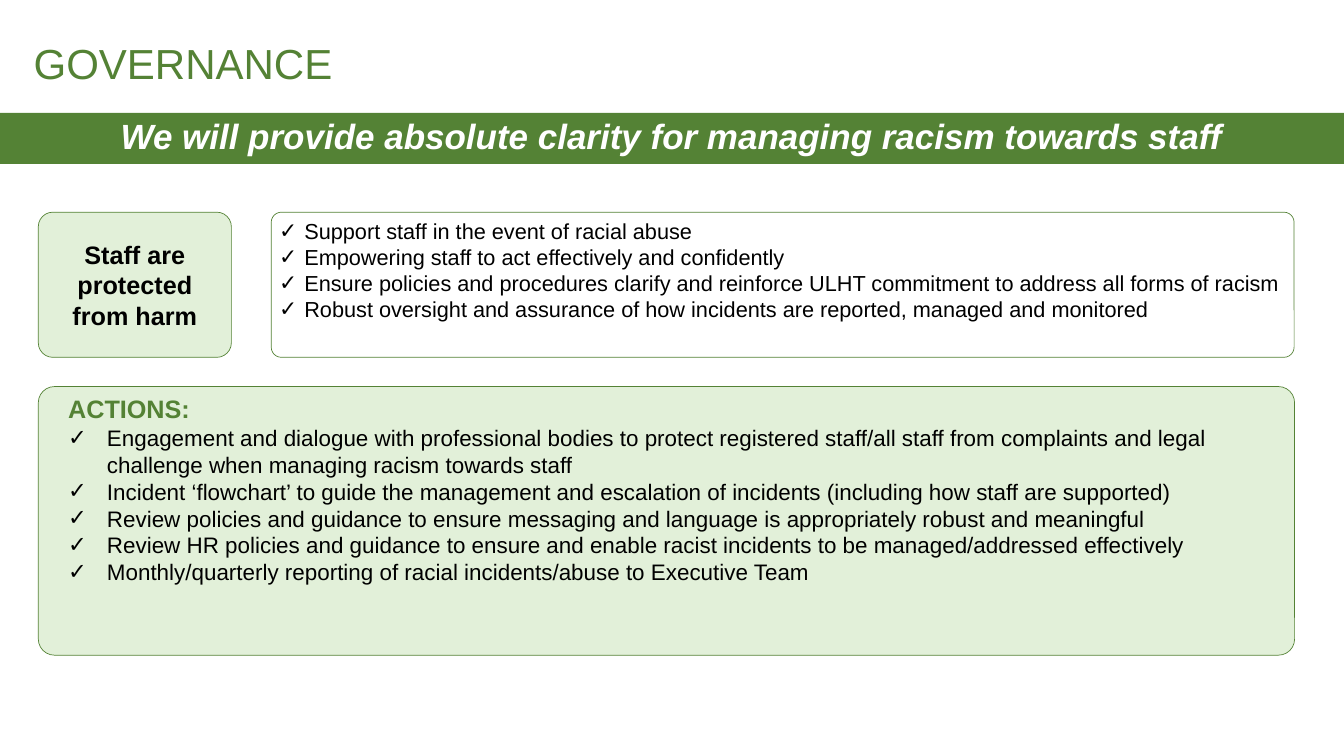
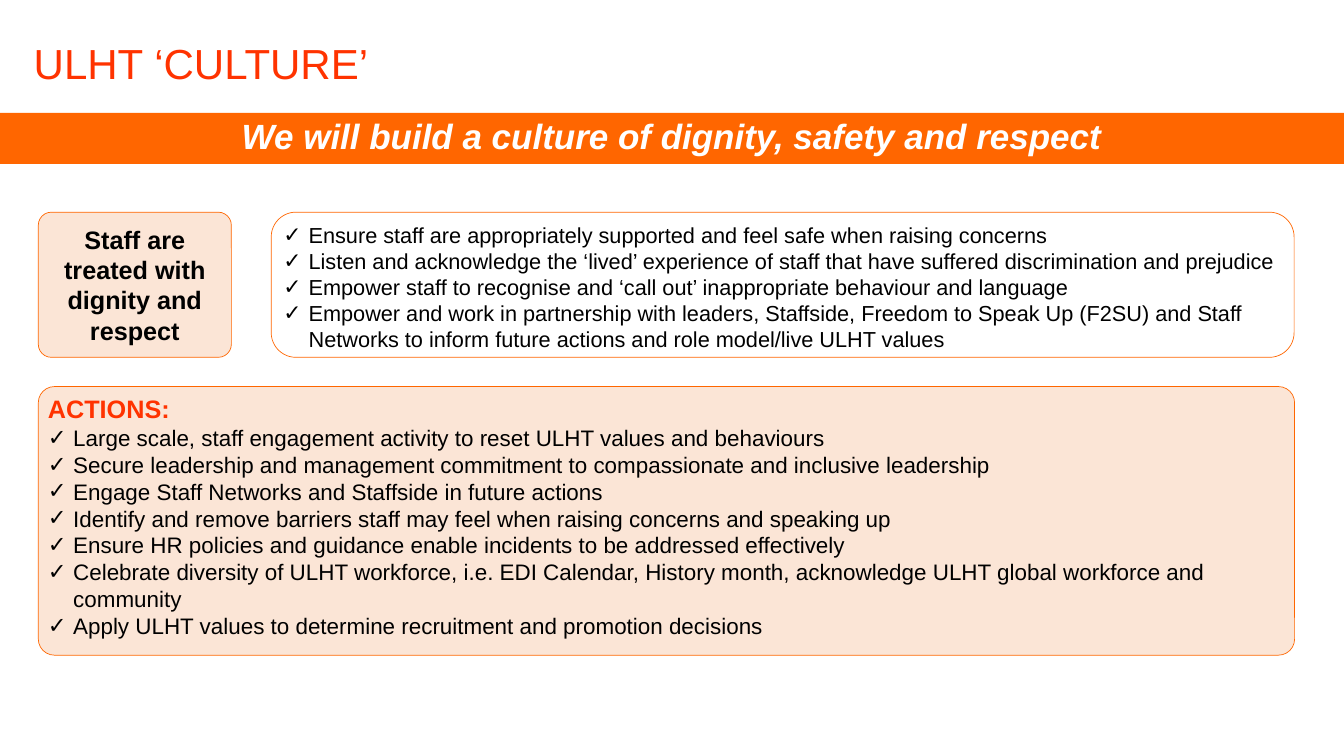
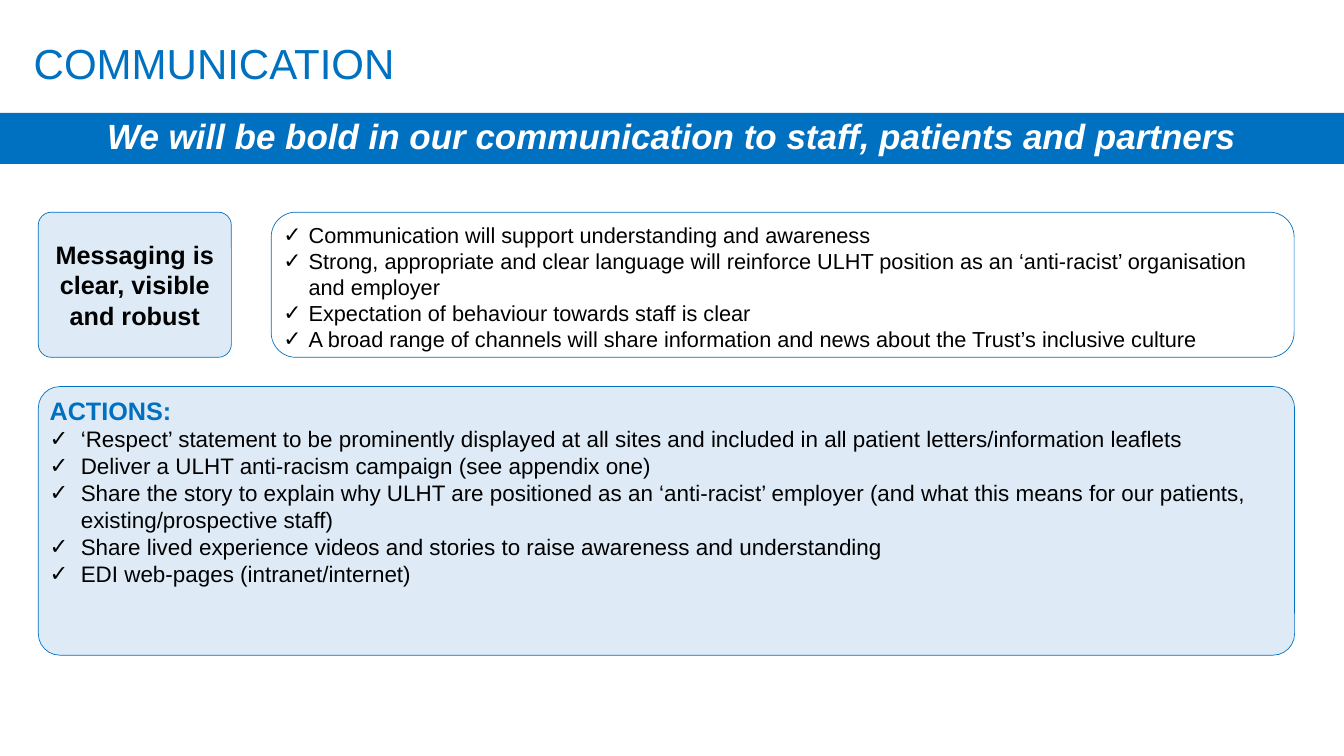
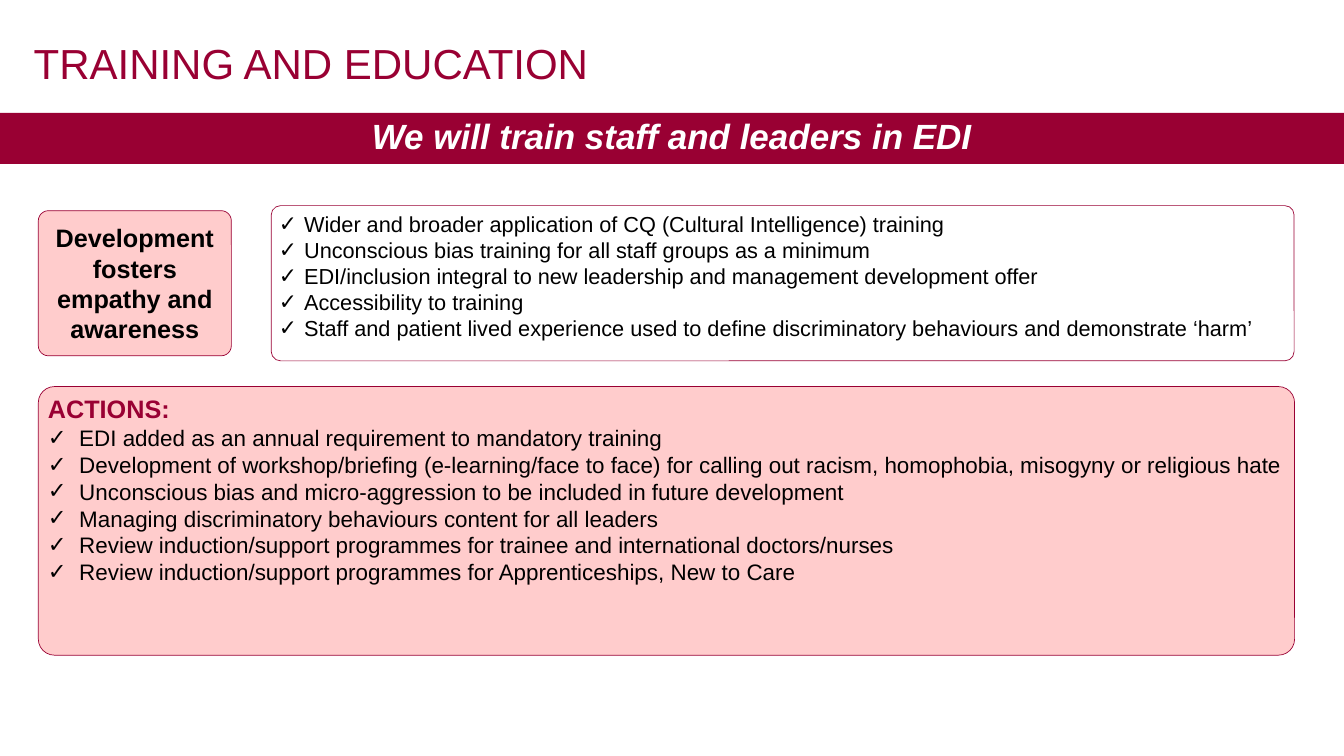
from dataclasses import dataclass

from lxml.etree import SubElement
from pptx import Presentation
from pptx.dml.color import RGBColor
from pptx.enum.shapes import MSO_SHAPE
from pptx.enum.text import MSO_ANCHOR, PP_ALIGN
from pptx.oxml.ns import qn
from pptx.util import Emu, Pt

EMU_PER_PX = 9144  # 100 px to the inch
PAGE_WIDTH, PAGE_HEIGHT = 2666, 1500
LEFT = 76
ACTIONS_AREA = (LEFT, 767, 2492, 533)
OUTCOME_WIDTH, CARD_HEIGHT = 383, 288
AIMS_LEFT, AIMS_WIDTH = 538, 2029


@dataclass(frozen=True)
class Theme:
    font: str = "Arial"
    black: str = "000000"
    white: str = "FFFFFF"
    title: int = 60
    band: int = 50
    heading: int = 36
    action: int = 32
    aim: int = 31
    outline: int = 1
    tight: float = 0.9
    tick: str = "✓"


@dataclass(frozen=True)
class Pillar:
    """Content and look of one slide; indents are in px, corners are ratios."""
    title: str
    pledge: str
    outcome: list
    aims: list
    actions: list
    accent: str
    tint: str
    title_color: str
    action_indent: int = 62
    action_hang: int = 62
    heading_indent: int = 0
    actions_corner: float = 0.06
    aims_corner: float = 0.17
    outcome_corner: float = 0.09
    outcome_top: int = 421
    aims_top: int = 421
    aims_height: int = CARD_HEIGHT


def px(length):
    return Emu(length * EMU_PER_PX)


def rgb(code):
    return RGBColor.from_string(code)


class Painter:
    def __init__(self, deck, theme):
        self.deck = deck
        self.theme = theme
        self.page = None

    def new_page(self):
        self.page = self.deck.slides.add_slide(self.deck.slide_layouts[6])

    def add_text(self, frame, text, size, color, bold=False, italic=False,
                 align=PP_ALIGN.LEFT, spacing=None, indent=0, hang=0, bullet=None):
        """Put text in the empty first paragraph, or in a new one after it."""
        para = frame.paragraphs[0]
        if para.runs:
            para = frame.add_paragraph()
        properties = para._p.get_or_add_pPr()
        properties.set("marL", str(px(indent)))
        properties.set("indent", str(px(-hang)))
        if bullet:
            SubElement(properties, qn("a:buFont")).set("typeface", self.theme.font)
            SubElement(properties, qn("a:buChar")).set("char", bullet)
        para.alignment = align
        if spacing:
            para.line_spacing = spacing
        span = para.add_run()
        span.text = text
        font = span.font
        font.name, font.size = self.theme.font, Pt(size)
        font.bold, font.italic = bold, italic
        font.color.rgb = rgb(color)

    def add_ticks(self, frame, items, size, indent, hang):
        for item in items:
            self.add_text(frame, item, size, self.theme.black, indent=indent,
                          hang=hang, bullet=self.theme.tick)

    def panel(self, area, fill=None, line=None, corner=None,
              anchor=MSO_ANCHOR.TOP):
        """Add a rectangle, rounded if a corner is given; return its text frame."""
        kind = MSO_SHAPE.RECTANGLE if corner is None else MSO_SHAPE.ROUNDED_RECTANGLE
        box = self.page.shapes.add_shape(kind, *map(px, area))
        box.shadow.inherit = False
        if corner is not None:
            box.adjustments[0] = corner
        if fill:
            box.fill.solid()
            box.fill.fore_color.rgb = rgb(fill)
        else:
            box.fill.background()
        if line:
            box.line.color.rgb = rgb(line)
            box.line.width = Pt(self.theme.outline)
        else:
            box.line.fill.background()
        frame = box.text_frame
        frame.word_wrap = True
        frame.vertical_anchor = anchor
        return frame

    def title(self, text, color):
        box = self.page.shapes.add_textbox(*map(px, (57, 28, 2530, 205)))
        frame = box.text_frame
        frame.word_wrap = True
        frame.vertical_anchor = MSO_ANCHOR.MIDDLE
        self.add_text(frame, text, self.theme.title, color,
                      spacing=self.theme.tight)

    def band(self, text, color):
        frame = self.panel((0, 224, PAGE_WIDTH, 101), fill=color,
                           anchor=MSO_ANCHOR.MIDDLE)
        self.add_text(frame, text, self.theme.band, self.theme.white, bold=True,
                      italic=True, align=PP_ALIGN.CENTER, spacing=self.theme.tight)

    def actions(self, pillar):
        frame = self.panel(ACTIONS_AREA, pillar.tint, pillar.accent,
                           pillar.actions_corner)
        self.add_text(frame, "ACTIONS:", self.theme.heading, pillar.title_color,
                      bold=True, indent=pillar.heading_indent)
        self.add_ticks(frame, pillar.actions, self.theme.action,
                       pillar.action_indent, pillar.action_hang)

    def aims(self, pillar):
        area = (AIMS_LEFT, pillar.aims_top, AIMS_WIDTH, pillar.aims_height)
        frame = self.panel(area, line=pillar.accent, corner=pillar.aims_corner)
        self.add_ticks(frame, pillar.aims, self.theme.aim, 50, 50)

    def outcome(self, pillar):
        area = (LEFT, pillar.outcome_top, OUTCOME_WIDTH, CARD_HEIGHT)
        frame = self.panel(area, pillar.tint, pillar.accent,
                           pillar.outcome_corner, MSO_ANCHOR.MIDDLE)
        for text in pillar.outcome:
            self.add_text(frame, text, self.theme.heading, self.theme.black,
                          bold=True, align=PP_ALIGN.CENTER)

    def pillar_page(self, pillar):
        self.new_page()
        self.actions(pillar)
        self.aims(pillar)
        self.outcome(pillar)
        self.title(pillar.title, pillar.title_color)
        self.band(pillar.pledge, pillar.accent)


PILLARS = [
    Pillar(
        title="GOVERNANCE",
        pledge="We will provide absolute clarity for managing racism towards staff",
        outcome=["Staff are protected", "from harm"],
        aims=[
            "Support staff in the event of racial abuse",
            "Empowering staff to act effectively and confidently",
            "Ensure policies and procedures clarify and reinforce ULHT commitment to address all forms of racism",
            "Robust oversight and assurance of how incidents are reported, managed and monitored",
        ],
        actions=[
            "Engagement and dialogue with professional bodies to protect registered staff/all staff from complaints and legal challenge when managing racism towards staff",
            "Incident ‘flowchart’ to guide the management and escalation of incidents (including how staff are supported)",
            "Review policies and guidance to ensure messaging and language is appropriately robust and meaningful",
            "Review HR policies and guidance to ensure and enable racist incidents to be managed/addressed effectively",
            "Monthly/quarterly reporting of racial incidents/abuse to Executive Team",
        ],
        accent="548235", tint="E2F0D9", title_color="548235",
        action_indent=117, action_hang=77, heading_indent=40,
        aims_corner=0.07, outcome_corner=0.1,
    ),
    Pillar(
        title="ULHT ‘CULTURE’",
        pledge="We will build a culture of dignity, safety and respect",
        outcome=["Staff are treated with dignity and respect"],
        aims=[
            "Ensure staff are appropriately supported and feel safe when raising concerns",
            "Listen and acknowledge the ‘lived’ experience of staff that have suffered discrimination and prejudice",
            "Empower staff to recognise and ‘call out’ inappropriate behaviour and language",
            "Empower and work in partnership with leaders, Staffside, Freedom to Speak Up (F2SU) and Staff Networks to inform future actions and role model/live ULHT values",
        ],
        actions=[
            "Large scale, staff engagement activity to reset ULHT values and behaviours",
            "Secure leadership and management commitment to compassionate and inclusive leadership",
            "Engage Staff Networks and Staffside in future actions",
            "Identify and remove barriers staff may feel when raising concerns and speaking up",
            "Ensure HR policies and guidance enable incidents to be addressed effectively",
            "Celebrate diversity of ULHT workforce, i.e. EDI Calendar, History month, acknowledge ULHT global workforce and community",
            "Apply ULHT values to determine recruitment and promotion decisions",
        ],
        accent="FF6600", tint="FBE5D6", title_color="FF3300",
        action_indent=50, action_hang=50,
    ),
    Pillar(
        title="COMMUNICATION",
        pledge="We will be bold in our communication to staff, patients and partners",
        outcome=["Messaging is clear, visible and robust"],
        aims=[
            "Communication will support understanding and awareness",
            "Strong, appropriate and clear language will reinforce ULHT position as an ‘anti-racist’ organisation and employer",
            "Expectation of behaviour towards staff is clear",
            "A broad range of channels will share information and news about the Trust’s inclusive culture",
        ],
        actions=[
            "‘Respect’ statement to be prominently displayed at all sites and included in all patient letters/information leaflets",
            "Deliver a ULHT anti-racism campaign (see appendix one)",
            "Share the story to explain why ULHT are positioned as an ‘anti-racist’ employer (and what this means for our patients, existing/prospective staff)",
            "Share lived experience videos and stories to raise awareness and understanding",
            "EDI web-pages (intranet/internet)",
        ],
        accent="0070C0", tint="DEEBF7", title_color="0070C0",
        actions_corner=0.08,
    ),
    Pillar(
        title="TRAINING AND EDUCATION",
        pledge="We will train staff and leaders in EDI",
        outcome=["Development fosters empathy and awareness"],
        aims=[
            "Wider and broader application of CQ (Cultural Intelligence) training",
            "Unconscious bias training for all staff groups as a minimum",
            "EDI/inclusion integral to new leadership and management development offer",
            "Accessibility to training",
            "Staff and patient lived experience used to define discriminatory behaviours and demonstrate ‘harm’",
        ],
        actions=[
            "EDI added as an annual requirement to mandatory training",
            "Development of workshop/briefing (e-learning/face to face) for calling out racism, homophobia, misogyny or religious hate",
            "Unconscious bias and micro-aggression to be included in future development",
            "Managing discriminatory behaviours content for all leaders",
            "Review induction/support programmes for trainee and international doctors/nurses",
            "Review induction/support programmes for Apprenticeships, New to Care",
        ],
        accent="990033", tint="FFCCCC", title_color="990033",
        aims_corner=0.06, outcome_corner=0.07,
        outcome_top=418, aims_top=408, aims_height=308,
    ),
]


def main():
    deck = Presentation()
    deck.slide_width, deck.slide_height = px(PAGE_WIDTH), px(PAGE_HEIGHT)
    painter = Painter(deck, Theme())
    for pillar in PILLARS:
        painter.pillar_page(pillar)
    deck.save("out.pptx")


if __name__ == "__main__":
    main()
